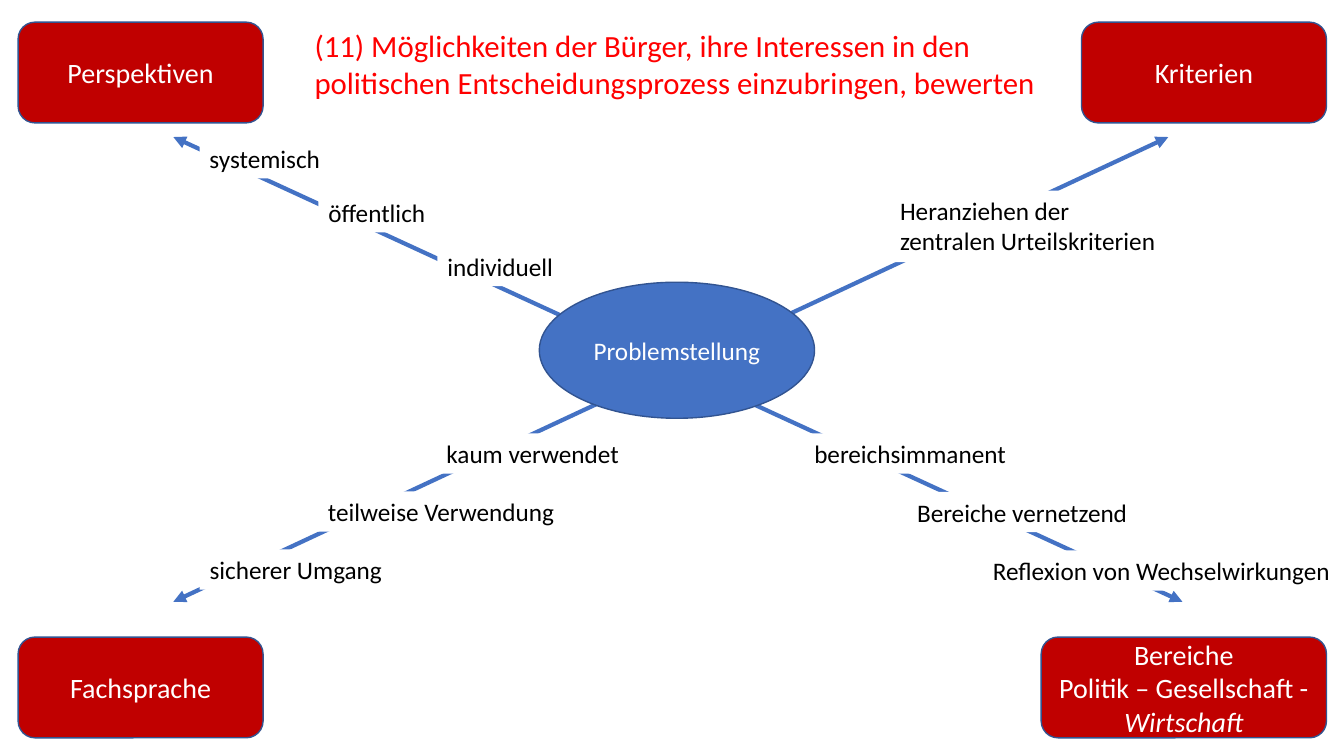
from dataclasses import dataclass

from lxml import etree
from pptx import Presentation
from pptx.dml.color import RGBColor
from pptx.enum.shapes import MSO_CONNECTOR, MSO_SHAPE
from pptx.enum.text import MSO_ANCHOR, MSO_AUTO_SIZE, PP_ALIGN
from pptx.oxml.ns import qn
from pptx.util import Inches, Pt

STRAIGHT = MSO_CONNECTOR.STRAIGHT
ELLIPSE, ROUNDED = MSO_SHAPE.OVAL, MSO_SHAPE.ROUNDED_RECTANGLE
TOP, MIDDLE = MSO_ANCHOR.TOP, MSO_ANCHOR.MIDDLE
FIT_SHAPE, NO_FIT = MSO_AUTO_SIZE.SHAPE_TO_FIT_TEXT, MSO_AUTO_SIZE.NONE
LEFT, CENTER = PP_ALIGN.LEFT, PP_ALIGN.CENTER


@dataclass(frozen=True)
class Theme:
    font: str = "Calibri"
    white: RGBColor = RGBColor(0xFF, 0xFF, 0xFF)
    black: RGBColor = RGBColor(0, 0, 0)
    blue: RGBColor = RGBColor(0x44, 0x72, 0xC4)
    outline: RGBColor = RGBColor(0x32, 0x54, 0x91)
    card: RGBColor = RGBColor(0xC0, 0, 0)
    heading: RGBColor = RGBColor(0xFF, 0, 0)
    heading_size: int = 22
    card_size: int = 20
    label_size: int = 18
    axis_width: int = 3
    outline_width: int = 1


THEME = Theme()


@dataclass(frozen=True)
class Box:
    left: float
    top: float
    width: float
    height: float

    def share(self, left, top, width, height):
        return Box(
            self.left + self.width * left / 100,
            self.top + self.height * top / 100,
            self.width * width / 100,
            self.height * height / 100,
        )

    def lengths(self):
        return [Inches(n) for n in (self.left, self.top, self.width, self.height)]


PAGE = Box(0, 0, 13.33, 7.5)
LINE_HEIGHT = 0.31
LABEL_PADDING = 0.09

CARDS = [
    (PAGE.share(1.35, 2.93, 18.23, 13.33), [("Perspektiven", False)]),
    (PAGE.share(80.47, 2.93, 18.23, 13.33), [("Kriterien", False)]),
    (PAGE.share(1.35, 84.27, 18.23, 13.33), [("Fachsprache", False)]),
    (
        PAGE.share(77.47, 84.27, 21.23, 13.33),
        [("Bereiche", False)],
        [("Politik – Gesellschaft - ", False), ("Wirtschaft", True)],
    ),
]

BRANCHES = [
    (
        PAGE.share(14.85, 18.27, 17.7, 14.27),
        [
            (0, 56, ["systemisch"]),
            (50, 50, ["öffentlich"]),
            (100, 53, ["individuell"]),
        ],
    ),
    (
        PAGE.share(14.85, 57.33, 17.63, 15.33),
        [
            (100, 82, ["kaum verwendet"]),
            (50, 105, ["teilweise Verwendung"]),
            (0, 82, ["sicherer Umgang"]),
        ],
    ),
    (
        PAGE.share(66.23, 25.2, 20.7, 9.47),
        [(0, 100, ["Heranziehen der", "zentralen Urteilskriterien"])],
    ),
    (
        PAGE.share(59.85, 57.33, 13.28, 15.47),
        [
            (0, 120, ["bereichsimmanent"]),
            (57.6, 131, ["Bereiche vernetzend"]),
            (100, 202, ["Reflexion von Wechselwirkungen"]),
        ],
    ),
]


def write(frame, paragraphs, size, color, align):
    for index, runs in enumerate(paragraphs):
        paragraph = frame.add_paragraph() if index else frame.paragraphs[0]
        paragraph.alignment = align
        for text, italic in runs:
            run = paragraph.add_run()
            run.text = text
            run.font.name = THEME.font
            run.font.size = Pt(size)
            run.font.color.rgb = color
            if italic:
                run.font.italic = True


def draw_heading(slide, box, text):
    heading = slide.shapes.title
    heading.left, heading.top, heading.width, heading.height = box.lengths()
    frame = heading.text_frame
    frame.word_wrap = True
    frame.auto_size = NO_FIT
    frame.vertical_anchor = TOP
    write(frame, [[(text, False)]], THEME.heading_size, THEME.heading, LEFT)


def draw_axis(slide, box, start, end):
    points = [box.share(x, y, 0, 0) for x, y in (start, end)]
    ends = [Inches(n) for point in points for n in (point.left, point.top)]
    axis = slide.shapes.add_connector(STRAIGHT, *ends)
    axis.line.color.rgb = THEME.blue
    axis.line.width = Pt(THEME.axis_width)
    properties = axis._element.spPr
    outline = properties.find(qn("a:ln"))
    for tip in ("a:headEnd", "a:tailEnd"):
        etree.SubElement(outline, qn(tip), type="triangle")
    etree.SubElement(properties, qn("a:effectLst"))


def draw_axes(slide, box):
    draw_axis(slide, box, (0, 100), (98.6, 0))
    draw_axis(slide, box, (0, 0), (100, 100))


def draw_node(slide, box, outline, fill, paragraphs, size):
    node = slide.shapes.add_shape(outline, *box.lengths())
    node.shadow.inherit = False
    node.fill.solid()
    node.fill.fore_color.rgb = fill
    node.line.color.rgb = THEME.outline
    node.line.width = Pt(THEME.outline_width)
    node.text_frame.word_wrap = True
    node.text_frame.vertical_anchor = MIDDLE
    write(node.text_frame, paragraphs, size, THEME.white, CENTER)


def draw_branch(slide, box, labels):
    row_step = 100 / max(len(labels) - 1, 1)
    for row, (column, width, lines) in enumerate(labels):
        height = LABEL_PADDING + LINE_HEIGHT * len(lines)
        place = box.share(column, row * row_step, width, 100 * height / box.height)
        label = slide.shapes.add_textbox(*place.lengths())
        label.fill.solid()
        label.fill.fore_color.rgb = THEME.white
        label.text_frame.word_wrap = False
        label.text_frame.auto_size = FIT_SHAPE
        paragraphs = [[(line, False)] for line in lines]
        write(label.text_frame, paragraphs, THEME.label_size, THEME.black, LEFT)


def main():
    deck = Presentation()
    deck.slide_width, deck.slide_height = PAGE.lengths()[2:]
    slide = deck.slides.add_slide(deck.slide_layouts.get_by_name("Title Only"))
    draw_heading(
        slide,
        PAGE.share(22.65, 2.93, 57.83, 11.2),
        "(11) Möglichkeiten der Bürger, ihre Interessen in den "
        "politischen Entscheidungsprozess einzubringen, bewerten",
    )
    draw_axes(slide, PAGE.share(12.9, 18.13, 75.08, 61.47))
    draw_node(
        slide,
        PAGE.share(40.13, 37.33, 20.48, 18),
        ELLIPSE,
        THEME.blue,
        [[("Problemstellung", False)]],
        THEME.label_size,
    )
    for box, *paragraphs in CARDS:
        draw_node(slide, box, ROUNDED, THEME.card, paragraphs, THEME.card_size)
    for box, labels in BRANCHES:
        draw_branch(slide, box, labels)
    deck.save("out.pptx")


if __name__ == "__main__":
    main()
